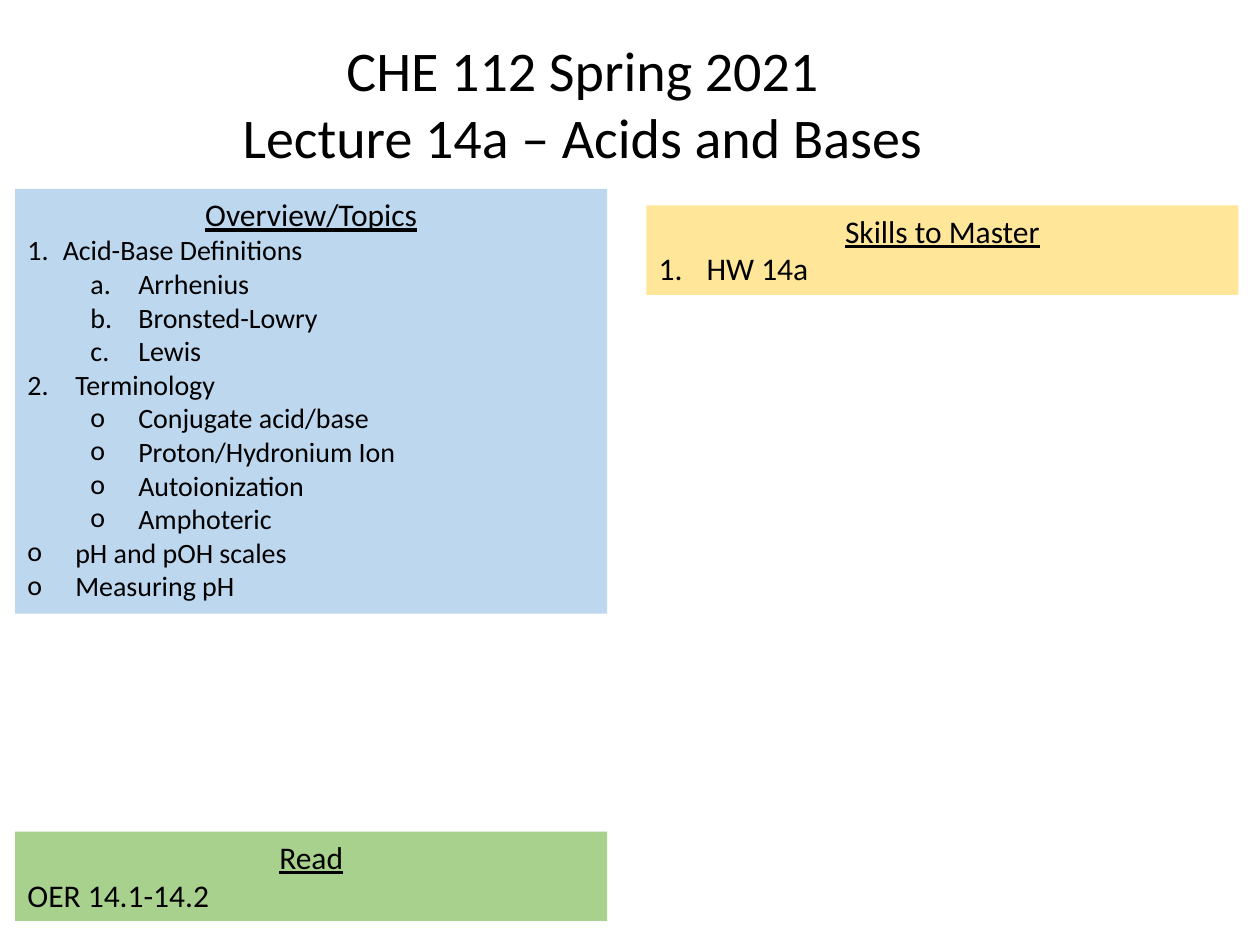
from lxml import etree
from pptx import Presentation
from pptx.dml.color import RGBColor as RGB
from pptx.enum.shapes import MSO_SHAPE as Shape
from pptx.enum.text import MSO_ANCHOR as Anchor, MSO_AUTO_SIZE as Fit, PP_ALIGN as Align
from pptx.oxml.ns import qn
from pptx.util import Inches, Pt

LEFT, RIGHT, WIDTH = 0.12, 5.13, 4.7
NUM, ALPHA, DOT = "arabicPeriod", "alphaLcPeriod", "o"


def color(code):
    return RGB.from_string(code)


class Deck:
    font = {"name": "Calibri", "size": Pt(18), "underline": False}
    ink = "000000"

    def __init__(self, wide, high):
        self.file = Presentation()
        self.file.slide_width = Inches(wide)
        self.file.slide_height = Inches(high)
        self.slide = self.file.slides.add_slide(self.file.slide_layouts[6])

    def line(self, para, text, align=Align.LEFT, **style):
        para.alignment = align
        run = para.add_run()
        run.text = text
        for key, value in {**self.font, **style}.items():
            setattr(run.font, key, value)
        run.font.color.rgb = color(self.ink)

    def bullet(self, para, mark, level, indent):
        """Give a hanging bullet or number; level adds half an inch."""
        para.level = level
        props = para._p.get_or_add_pPr()
        props.set("marL", str(Inches(indent + level * 0.5)))
        props.set("indent", str(Inches(-indent)))
        etree.SubElement(props, qn("a:buFont")).set("typeface", self.font["name"])
        if mark == DOT:
            etree.SubElement(props, qn("a:buChar")).set("char", mark)
        else:
            etree.SubElement(props, qn("a:buAutoNum")).set("type", mark)

    def title(self, lines, x, y, w, h):
        box = self.slide.shapes.add_textbox(*map(Inches, (x, y, w, h)))
        frame = box.text_frame
        frame.word_wrap = False
        frame.auto_size = Fit.SHAPE_TO_FIT_TEXT
        for i, text in enumerate(lines):
            para = frame.add_paragraph() if i else frame.paragraphs[0]
            self.line(para, text, Align.CENTER, size=Pt(32))

    def panel(self, head, items, x, y, h, fill, size=18):
        """Draw a filled box; items are (text, mark, level, indent)."""
        box = self.slide.shapes.add_shape(
            Shape.RECTANGLE, *map(Inches, (x, y, WIDTH, h)))
        box.shadow.inherit = False
        box.fill.solid()
        box.fill.fore_color.rgb = color(fill)
        box.line.fill.background()
        frame = box.text_frame
        frame.word_wrap = True
        frame.auto_size = Fit.SHAPE_TO_FIT_TEXT
        frame.vertical_anchor = Anchor.TOP
        self.line(frame.paragraphs[0], head, Align.CENTER, underline=True)
        for text, mark, level, indent in items:
            para = frame.add_paragraph()
            self.line(para, text, size=Pt(size))
            if mark:
                self.bullet(para, mark, level, indent)


def main():
    deck = Deck(10, 7.5)
    topics = [("Acid-Base Definitions", NUM, 0, 0.28)]
    for mark, level, names in (
        (ALPHA, 1, ("Arrhenius", "Bronsted-Lowry", "Lewis")),
        (NUM, 0, ("Terminology",)),
        (DOT, 1, ("Conjugate acid/base", "Proton/Hydronium Ion",
                  "Autoionization", "Amphoteric")),
        (DOT, 0, ("pH and pOH scales", "Measuring pH")),
    ):
        topics += [(name, mark, level, 0.38) for name in names]

    deck.panel("Overview/Topics", topics, LEFT, 1.5, 3.37, "BDD7EE", size=16)
    deck.panel("Skills to Master", [("HW 14a", NUM, 0, 0.38)],
               RIGHT, 1.63, 0.71, "FFE699")
    deck.panel("Read", [("OER 14.1-14.2", None, 0, 0)],
               LEFT, 6.6, 0.71, "A9D18E")
    deck.title(["CHE 112 Spring 2021", "Lecture 14a – Acids and Bases"],
               1.8, 0.23, 5.65, 1.18)
    deck.file.save("out.pptx")


if __name__ == "__main__":
    main()
